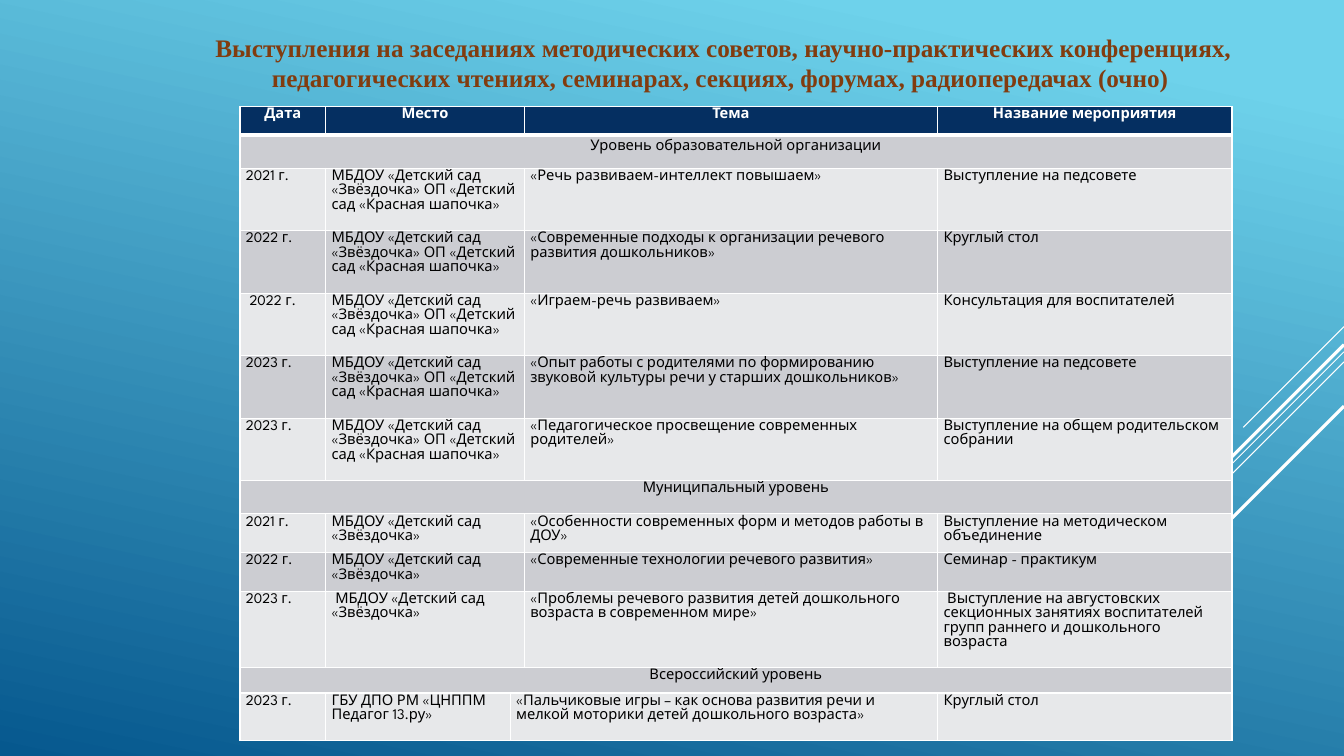
from lxml.etree import SubElement
from pptx import Presentation
from pptx.dml.color import RGBColor
from pptx.enum.shapes import MSO_CONNECTOR
from pptx.enum.text import PP_ALIGN
from pptx.oxml.ns import qn
from pptx.util import Inches, Pt

WHITE = RGBColor(0xFF, 0xFF, 0xFF)
BLACK = RGBColor(0, 0, 0)
BROWN = RGBColor(0x81, 0x3C, 0x0F)
NAVY = RGBColor(0x05, 0x2F, 0x61)
BANDS = [RGBColor(0xE7, 0xE8, 0xEA), RGBColor(0xCC, 0xCD, 0xD2)]
SKY = [(0.1, RGBColor(0x6E, 0xD2, 0xEB)), (1, RGBColor(0x06, 0x58, 0x8E))]

TITLE = (" Выступления на заседаниях методических советов, научно-практических конференциях, "
         "педагогических чтениях, семинарах, секциях, форумах, радиопередачах (очно)")
GARDEN = "МБДОУ «Детский сад «Звёздочка»"
BRANCH = GARDEN + " ОП «Детский сад «Красная шапочка»"
ROWS = [
    (0.28, "Дата", "Место", "Тема", "Название мероприятия"),
    (0.33, "Уровень образовательной организации"),
    (0.62, "2021 г.", BRANCH, "«Речь развиваем-интеллект повышаем»", "Выступление на педсовете"),
    (0.62, "2022 г.", BRANCH,
     "«Современные подходы к организации речевого развития дошкольников»", "Круглый стол"),
    (0.62, " 2022 г.", BRANCH, "«Играем-речь развиваем»", "Консультация для воспитателей"),
    (0.62, "2023 г.", BRANCH,
     "«Опыт работы с родителями по формированию звуковой культуры речи у старших дошкольников»",
     "Выступление на педсовете"),
    (0.62, "2023 г.", BRANCH, "«Педагогическое просвещение современных родителей»",
     "Выступление на общем родительском собрании"),
    (0.33, "Муниципальный уровень"),
    (0.31, "2021 г.", GARDEN, "«Особенности современных форм и методов работы в ДОУ»",
     "Выступление на методическом объединение"),
    (0.34, "2022 г.", GARDEN, "«Современные технологии речевого развития»",
     "Семинар - практикум"),
    (0.62, "2023 г.", " " + GARDEN,
     "«Проблемы речевого развития детей дошкольного возраста в современном мире»",
     " Выступление на августовских секционных занятиях воспитателей групп раннего "
     "и дошкольного возраста"),
    (0.25, "Всероссийский уровень"),
    (0.47, "2023 г.", "ГБУ ДПО РМ «ЦНППМ Педагог 13.ру»",
     "«Пальчиковые игры – как основа развития речи и мелкой моторики "
     "детей дошкольного возраста»", "Круглый стол"),
]
COLS = [0.85, 1.83, 0.14, 4.1, 2.92]
LAST = len(ROWS) - 1
DIAGONALS = [(3.24, 1, 0.75), (3.49, 3.26, 0.75), (3.59, 2.07, 0.75),
             (3.42, 1.91, 2.25), (4.03, 1.39, 2.25)]
WIDTH, HEIGHT = 13.33, 7.5


def write(tf, text, size, font, color, bold=False, align=PP_ALIGN.LEFT, spacing=None, after=None):
    tf.word_wrap = True
    p = tf.paragraphs[0]
    p.alignment = align
    p.line_spacing = spacing
    p.space_after = after
    r = p.add_run()
    r.text = text
    r.font.size = Pt(size)
    r.font.name = font
    r.font.bold = bold
    r.font.color.rgb = color


def set_borders(cell, bottom):
    tcPr = cell._tc.get_or_add_tcPr()
    for side, width in zip("LRTB", (1, 1, 1, bottom)):
        ln = SubElement(tcPr, qn("a:ln" + side), w=str(Pt(width)))
        SubElement(SubElement(ln, qn("a:solidFill")), qn("a:srgbClr"), val=str(WHITE))


def add_diagonals(s):
    for top, run, width in DIAGONALS:
        line = s.shapes.add_connector(MSO_CONNECTOR.STRAIGHT, Inches(WIDTH), Inches(top),
                                      Inches(WIDTH - run), Inches(top + run))
        line.line.color.rgb = WHITE
        line.line.width = Pt(width)
        SubElement(line._element.spPr, qn("a:effectLst"))


def add_talks(s):
    tbl = s.shapes.add_table(len(ROWS), len(COLS), Inches(2.38), Inches(1.06),
                             Inches(sum(COLS)), Inches(sum(row[0] for row in ROWS))).table
    tbl.first_row = tbl.horz_banding = False
    for col, width in zip(tbl.columns, COLS):
        col.width = Inches(width)
    for i, (height, *texts) in enumerate(ROWS):
        tbl.rows[i].height = Inches(height)
        header, level = i == 0, len(texts) == 1
        for cell in tbl.rows[i].cells:
            set_borders(cell, 3 if header else 1)
            cell.fill.solid()
            cell.fill.fore_color.rgb = NAVY if header else BANDS[i % 2]
            side, top, bottom = (0.08, 0.04, 0.04) if i == 1 else (0.06, 0.01, 0)
            cell.margin_left = cell.margin_right = Inches(side)
            cell.margin_top, cell.margin_bottom = Inches(top), Inches(bottom)
        first, last = (0, 4) if level else (2, 3) if i == LAST else (1, 2)
        tbl.cell(i, first).merge(tbl.cell(i, last))
        places = [0, 1, 2 if i == LAST else 3, 4]
        for j, text in zip(places, texts):
            write(tbl.cell(i, j).text_frame, text, 10.5, "League Spartan",
                  WHITE if header else BLACK, bold=header,
                  align=PP_ALIGN.CENTER if header or level else PP_ALIGN.LEFT,
                  spacing=1.07, after=Pt(8))


def main():
    prs = Presentation()
    prs.slide_width, prs.slide_height = Inches(WIDTH), Inches(HEIGHT)
    s = prs.slides.add_slide(prs.slide_layouts[6])
    fill = s.background.fill
    fill.gradient()
    fill.gradient_angle = 360 - 102
    for stop, (position, color) in zip(fill.gradient_stops, SKY):
        stop.position = position
        stop.color.rgb = color
    add_diagonals(s)
    title = s.shapes.add_textbox(Inches(1.66), Inches(0.27), Inches(10.97), Inches(0.71))
    write(title.text_frame, TITLE, 18, "Times New Roman", BROWN, bold=True,
          align=PP_ALIGN.CENTER)
    add_talks(s)
    prs.save("out.pptx")


if __name__ == "__main__":
    main()
